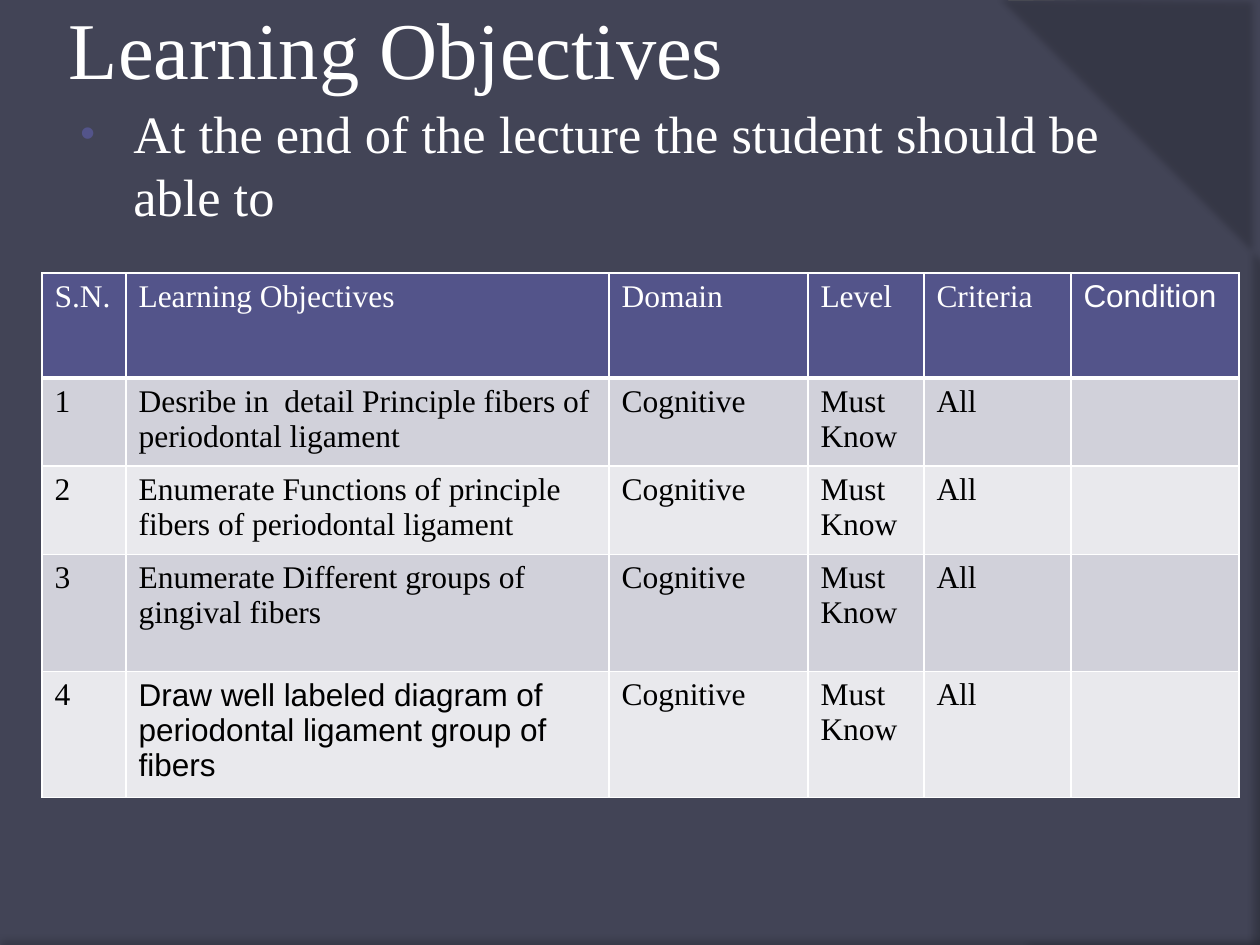
"""Build the learning objectives slide."""
from lxml import etree
from pptx import Presentation, util as u
from pptx.dml.color import RGBColor
from pptx.enum import text
from pptx.oxml import ns

PX = 914400 // 126
SERIF, SANS = "Times New Roman", "Arial"
COLORS = dict(back="424456", wave="7F7F7F", side="5E5E5E", accent="53548A",
              odd="D1D1DA", even="E9E9ED", white="FFFFFF", black="000000")

TITLE = "Learning Objectives"
INTRO = "At the end of the lecture the student should be able to"
HEADER = ["S.N.", "Learning Objectives", "Domain", "Level", "Criteria", "Condition"]
OBJECTIVES = [
    "Desribe in  detail Principle fibers of periodontal ligament",
    "Enumerate Functions of principle fibers of periodontal ligament",
    "Enumerate Different groups of gingival fibers",
    "Draw well labeled diagram of periodontal ligament group of fibers",
]
ROWS = [HEADER] + [[str(n), goal, "Cognitive", "Must Know", "All", ""]
                   for n, goal in enumerate(OBJECTIVES, 1)]
SANS_CELLS = {HEADER[-1], OBJECTIVES[-1]}
COL_WIDTHS = [84, 483, 199, 116, 147, 168]
ROW_HEIGHTS = [105, 82, 83, 117, 118]
SWOOSHES = [
    dict(points=[(0, 888), (0, 945), (1260, 945), (1260, 655)],
         controls=[(704, 919), (493, 906)],
         color="wave", alpha=45, shadow=(35, 4, 3.5, 270)),
    dict(points=[(1008, 0), (1260, 3), (1260, 945), (1034, 945)],
         controls=[(1178, 780), (1283, 378)],
         color="side", alpha=40, shadow=(45, 4, 4, 180)),
]


def rgb(name):
    return RGBColor.from_string(COLORS[name])


def add(parent, tag, **attrs):
    return etree.SubElement(parent, ns.qn(tag), {k: str(v) for k, v in attrs.items()})


def add_color(parent, name, alpha=100):
    color = add(parent, "a:srgbClr", val=COLORS[name])
    if alpha < 100:
        add(color, "a:alpha", val=alpha * 1000)


def write(p, words, size, color="white", font=SERIF):
    r = p.add_run()
    r.text = words
    for key, value in dict(size=u.Pt(size), name=font).items():
        setattr(r.font, key, value)
    r.font.color.rgb = rgb(color)


def add_swoosh(s, points, controls, color, alpha, shadow):
    builder = s.shapes.build_freeform(*points[0], scale=PX)
    builder.add_line_segments(points[1:], close=True)
    sp = builder.convert_to_shape()
    last = sp._element.findall(".//" + ns.qn("a:lnTo"))[-1]
    curve = etree.Element(ns.qn("a:cubicBezTo"))
    for x, y in controls + points[:1]:
        add(curve, "a:pt", x=x * PX - sp.left, y=y * PX - sp.top)
    if last[0].get("x") == curve[-1].get("x") and last[0].get("y") == curve[-1].get("y"):
        last.getparent().replace(last, curve)
    else:
        last.addnext(curve)
    sp.fill.solid()
    sp.fill.fore_color.rgb = rgb(color)
    fill = sp._element.spPr.find(ns.qn("a:solidFill"))
    add(fill[0], "a:alpha", val=alpha * 1000)
    sp.line.fill.background()
    sp.shadow.inherit = False
    opacity, blur, distance, angle = shadow
    effects = sp._element.spPr.find(ns.qn("a:effectLst"))
    outer = add(effects, "a:outerShdw", blurRad=u.Pt(blur), dist=u.Pt(distance),
                dir=angle * 60000, algn="ctr", rotWithShape=0)
    add_color(outer, "black", opacity)


def add_text(s, box, **frame):
    tf = s.shapes.add_textbox(*(v * PX for v in box)).text_frame
    for key, value in dict(word_wrap=True, **frame).items():
        setattr(tf, key, value)
    return tf.paragraphs[0]


def add_bullet(p):
    p.space_before = u.Pt(6)
    pPr = p._p.get_or_add_pPr()
    pPr.set("marL", str(58 * PX))
    pPr.set("indent", str(-53 * PX))
    add_color(add(pPr, "a:buClr"), "accent")
    add(pPr, "a:buSzPct", val=80000)
    add(pPr, "a:buFont", typeface=SANS)
    add(pPr, "a:buChar", char="•")


def add_borders(cell, bottom):
    tcPr = cell._tc.get_or_add_tcPr()
    for i, (side, width) in enumerate(dict(L=1, R=1, T=1, B=bottom).items()):
        ln = etree.Element(ns.qn("a:ln" + side), w=str(u.Pt(width)))
        add_color(add(ln, "a:solidFill"), "white")
        tcPr.insert(i, ln)


def add_objectives(s, left, top):
    size = (sum(COL_WIDTHS) * PX, sum(ROW_HEIGHTS) * PX)
    table = s.shapes.add_table(len(ROWS), len(HEADER), left * PX, top * PX, *size).table
    for column, width in zip(table.columns, COL_WIDTHS):
        column.width = width * PX
    for i, (row, height, words) in enumerate(zip(table.rows, ROW_HEIGHTS, ROWS)):
        row.height = height * PX
        band = "accent" if i == 0 else "odd" if i % 2 else "even"
        for cell, value in zip(row.cells, words):
            cell.fill.solid()
            cell.fill.fore_color.rgb = rgb(band)
            add_borders(cell, 1 if i else 3)
            if value:
                write(cell.text_frame.paragraphs[0], value, 18,
                      "black" if i else "white", SANS if value in SANS_CELLS else SERIF)


def main():
    prs = Presentation()
    prs.slide_width, prs.slide_height = 1260 * PX, 945 * PX
    s = prs.slides.add_slide(prs.slide_layouts[6])
    s.background.fill.solid()
    s.background.fill.fore_color.rgb = rgb("back")
    for swoosh in SWOOSHES:
        add_swoosh(s, **swoosh)
    title = add_text(s, (63, -31, 1134, 157), margin_left=6 * PX, margin_right=6 * PX,
                     vertical_anchor=text.MSO_ANCHOR.MIDDLE)
    write(title, TITLE, 46)
    intro = add_text(s, (63, 95, 1134, 624))
    add_bullet(intro)
    write(intro, INTRO, 30)
    add_objectives(s, 42, 273)
    prs.save("out.pptx")


if __name__ == "__main__":
    main()
